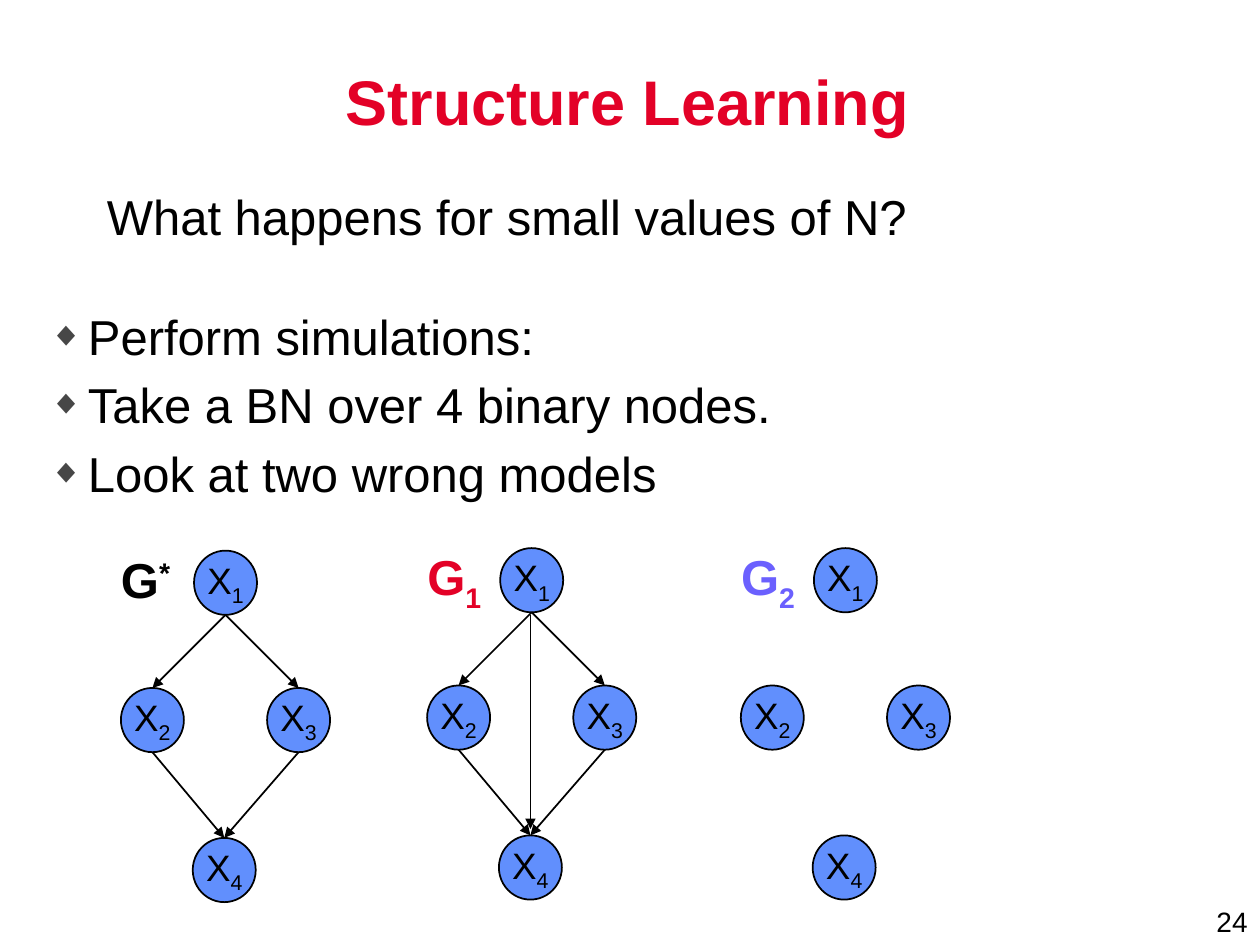
from dataclasses import dataclass

from lxml.etree import SubElement
from pptx import Presentation
from pptx.dml.color import RGBColor
from pptx.enum.shapes import MSO_CONNECTOR, MSO_SHAPE
from pptx.enum.text import MSO_ANCHOR, PP_ALIGN
from pptx.oxml.ns import qn
from pptx.util import Inches, Pt

BLACK = RGBColor(0x00, 0x00, 0x00)
RED = RGBColor(0xE3, 0x01, 0x27)
VIOLET = RGBColor(0x6B, 0x60, 0xFE)
BLUE = RGBColor(0x61, 0x8F, 0xFD)
BULLET_GRAY = RGBColor(0x47, 0x47, 0x47)
FONT = "Arial"
NODE_W, NODE_H = 0.5, 0.51
NODE_OFFSETS = {1: (0.58, 0.01), 2: (0, 1.1), 3: (1.16, 1.1), 4: (0.57, 2.29)}
DIAMOND = ((1, 2), (1, 3), (2, 4), (3, 4))


@dataclass
class Graph:
    left: float
    top: float
    mark: str
    mark_baseline: int
    label_width: float
    color: RGBColor
    edges: tuple[tuple[int, int], ...] = ()
    has_long_edge: bool = False


GRAPHS = (
    Graph(0.96, 4.36, "*", 30, 0.45, BLACK, DIAMOND),
    Graph(5.88, 4.34, "2", -25, 0.49, VIOLET),
    Graph(3.39, 4.34, "1", -25, 0.49, RED, DIAMOND, True),
)


def add_run(p, text: str, size: float, color: RGBColor = BLACK,
            bold: bool = False, baseline: int = 0) -> None:
    r = p.add_run()
    r.text = text
    r.font.name = FONT
    r.font.size = Pt(size)
    r.font.bold = bold
    r.font.color.rgb = color
    if baseline:
        r.font._element.set("baseline", str(baseline * 1000))


def add_text_box(shapes, left: float, top: float, width: float, height: float,
                 wrap: bool = True):
    sp = shapes.add_textbox(Inches(left), Inches(top), Inches(width), Inches(height))
    sp.text_frame.word_wrap = wrap
    return sp.text_frame


def set_tight_margins(tf) -> None:
    tf.margin_left = tf.margin_right = Inches(0.02)
    tf.margin_top = tf.margin_bottom = 0


def set_indent(p, margin: float, indent: float = 0) -> None:
    pPr = p._p.get_or_add_pPr()
    pPr.set("marL", str(Inches(margin)))
    pPr.set("indent", str(Inches(indent)))
    before = SubElement(pPr, qn("a:spcBef"))
    SubElement(before, qn("a:spcPct")).set("val", "20000")


def add_bullet(p) -> None:
    pPr = p._p.get_or_add_pPr()
    color = SubElement(pPr, qn("a:buClr"))
    SubElement(color, qn("a:srgbClr")).set("val", str(BULLET_GRAY))
    SubElement(pPr, qn("a:buSzPct")).set("val", "70000")
    SubElement(pPr, qn("a:buFont")).set("typeface", FONT)
    SubElement(pPr, qn("a:buChar")).set("char", "◆")


def add_node(shapes, left: float, top: float, number: int):
    sp = shapes.add_shape(MSO_SHAPE.OVAL, Inches(left), Inches(top),
                          Inches(NODE_W), Inches(NODE_H))
    sp.shadow.inherit = False
    sp.fill.solid()
    sp.fill.fore_color.rgb = BLUE
    sp.line.color.rgb = BLACK
    sp.line.width = Pt(1)
    tf = sp.text_frame
    tf.word_wrap = True
    tf.vertical_anchor = MSO_ANCHOR.MIDDLE
    set_tight_margins(tf)
    p = tf.paragraphs[0]
    p.alignment = PP_ALIGN.CENTER
    add_run(p, "X", 21)
    add_run(p, str(number), 21, baseline=-25)
    return sp


def add_arrow(shapes, x1: int, y1: int, x2: int, y2: int):
    cxn = shapes.add_connector(MSO_CONNECTOR.STRAIGHT, x1, y1, x2, y2)
    cxn.line.color.rgb = BLACK
    cxn.line.width = Pt(1)
    SubElement(cxn.line._get_or_add_ln(), qn("a:tailEnd")).set("type", "triangle")
    SubElement(cxn._element.spPr, qn("a:effectLst"))
    return cxn


def add_graph(slide, graph: Graph) -> None:
    shapes = slide.shapes.add_group_shape().shapes
    nodes = {n: add_node(shapes, graph.left + dx, graph.top + dy, n)
             for n, (dx, dy) in NODE_OFFSETS.items()}
    for start, end in graph.edges:
        s, e = nodes[start], nodes[end]
        cxn = add_arrow(shapes, s.left + s.width // 2, s.top + s.height,
                        e.left + e.width // 2, e.top)
        cxn.end_connect(e, 0)
    tf = add_text_box(shapes, graph.left - 0.03, graph.top,
                      graph.label_width, 0.47, wrap=False)
    set_tight_margins(tf)
    p = tf.paragraphs[0]
    p.alignment = PP_ALIGN.CENTER
    add_run(p, "G", 28, graph.color, True)
    add_run(p, graph.mark, 28, graph.color, True, graph.mark_baseline)
    if graph.has_long_edge:
        x = nodes[4].left + nodes[4].width // 2
        add_arrow(shapes, x, Inches(graph.top + 0.54), x, Inches(graph.top + 2.24))


def main() -> None:
    prs = Presentation()
    prs.slide_width, prs.slide_height = Inches(10), Inches(7.5)
    slide = prs.slides.add_slide(prs.slide_layouts[5])

    title = slide.shapes.title
    title.left, title.top = Inches(0.38), Inches(0.17)
    title.width, title.height = Inches(9.2), Inches(1.25)
    title.text_frame.vertical_anchor = MSO_ANCHOR.MIDDLE
    p = title.text_frame.paragraphs[0]
    p.alignment = PP_ALIGN.CENTER
    add_run(p, "Structure Learning", 36, RED, True)

    p = add_text_box(slide.shapes, 0.33, 1.43, 8.85, 0.95).paragraphs[0]
    set_indent(p, 0.42)
    add_run(p, "What happens for small values of N?", 28)

    tf = add_text_box(slide.shapes, 0.29, 2.38, 9.36, 1.9)
    for i, text in enumerate(("Perform simulations:",
                              "Take a BN over 4 binary nodes.",
                              "Look at two wrong models")):
        p = tf.add_paragraph() if i else tf.paragraphs[0]
        set_indent(p, 0.31, -0.31)
        add_bullet(p)
        add_run(p, text, 28)

    for graph in GRAPHS:
        add_graph(slide, graph)

    tf = add_text_box(slide.shapes, 9.53, 7.13, 0.47, 0.37, wrap=False)
    tf.vertical_anchor = MSO_ANCHOR.MIDDLE
    p = tf.paragraphs[0]
    p.alignment = PP_ALIGN.RIGHT
    add_run(p, "24", 16)

    prs.save("out.pptx")


if __name__ == "__main__":
    main()
